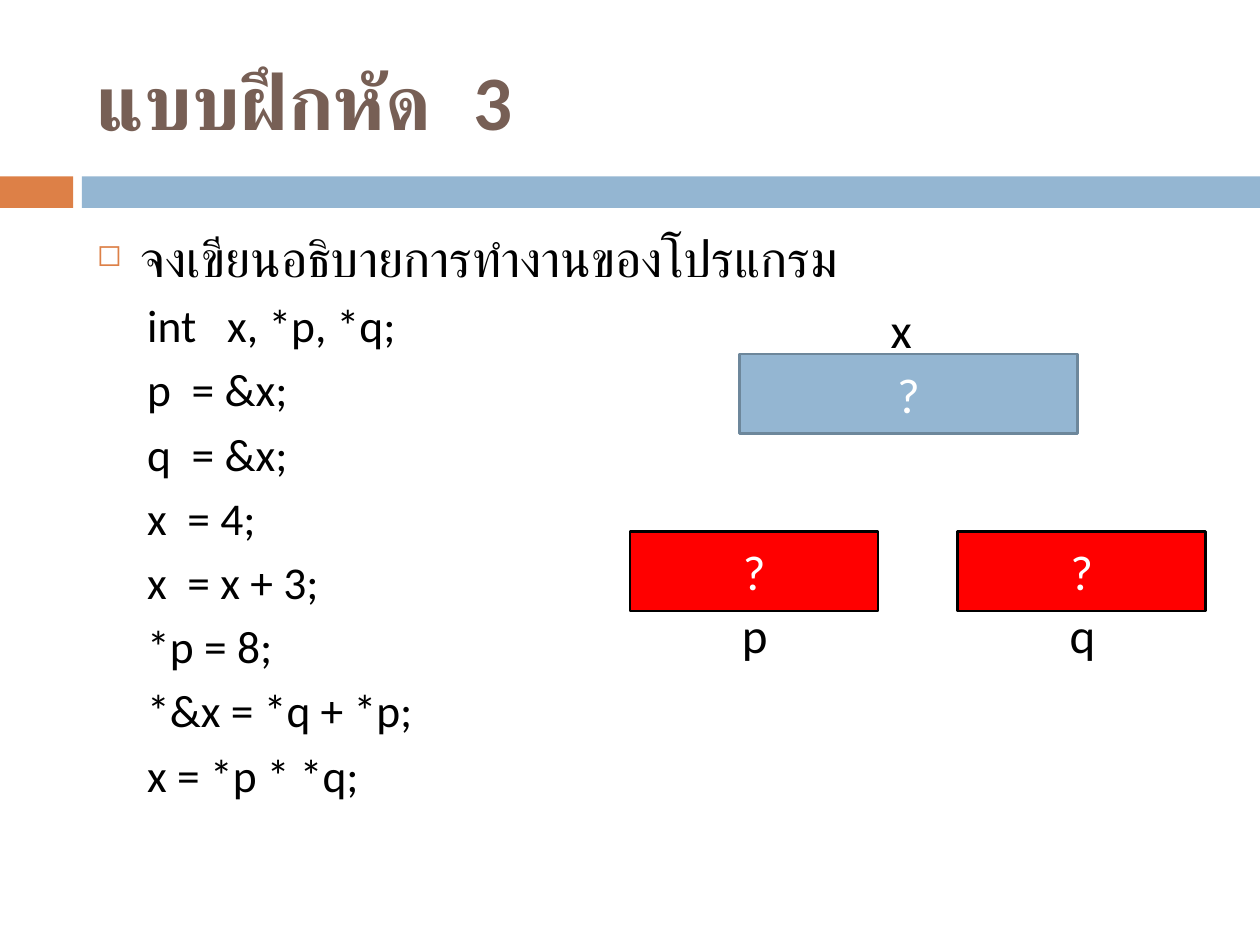
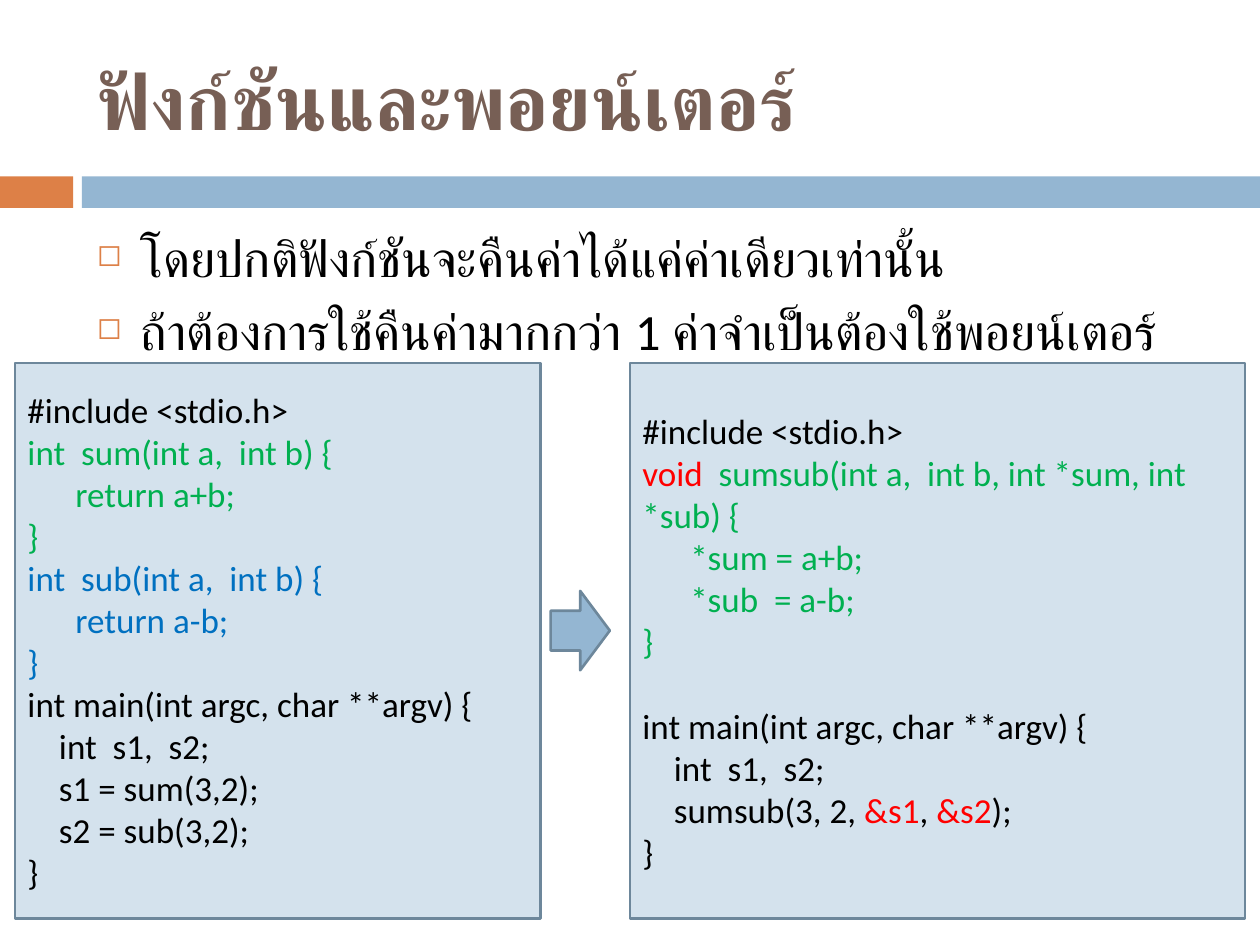
from dataclasses import dataclass

from lxml import etree
from pptx import Presentation
from pptx.dml.color import RGBColor
from pptx.enum.shapes import MSO_SHAPE
from pptx.enum.text import MSO_ANCHOR, MSO_AUTO_SIZE, PP_ALIGN
from pptx.oxml.ns import qn
from pptx.util import Inches, Pt

RECTANGLE = MSO_SHAPE.RECTANGLE
RIGHT_ARROW = MSO_SHAPE.RIGHT_ARROW
MIDDLE = MSO_ANCHOR.MIDDLE
FIT_TEXT = MSO_AUTO_SIZE.SHAPE_TO_FIT_TEXT
CENTER = PP_ALIGN.CENTER
LEFT = PP_ALIGN.LEFT


@dataclass(frozen=True)
class Theme:
    font: str = "Calibri"
    black: str = "000000"
    white: str = "FFFFFF"
    title: str = "775F55"
    orange: str = "DD8047"
    blue: str = "94B6D2"
    outline: str = "6D879B"
    panel: str = "D4E2ED"
    red: str = "FF0000"
    green: str = "00B050"
    code_blue: str = "0070C0"
    title_size: int = 44
    bullet_size: int = 29
    statement_size: int = 26
    memory_size: int = 28
    code_size: int = 20
    line_width: float = 1.5


THEME = Theme()


@dataclass(frozen=True)
class Area:
    left: float
    top: float
    width: float
    height: float

    def lengths(self):
        return [Inches(n) for n in (self.left, self.top, self.width, self.height)]


@dataclass(frozen=True)
class Span:
    text: str
    color: str = THEME.black


@dataclass(frozen=True)
class CodeLine:
    spans: tuple[Span, ...]
    indent: float = 0
    space_before: float = 0


@dataclass(frozen=True)
class MemoryCell:
    name: str
    area: Area
    label_left: float
    label_top: float
    fill: str
    line: str


@dataclass(frozen=True)
class CodePanel:
    area: Area
    lines: tuple[CodeLine, ...]


TITLE_AREA = Area(0.67, 0.25, 8.92, 1.08)
BODY_AREA = Area(0.67, 1.75, 8.92, 4.92)
BANDS = ((Area(0, 1.4, 0.58, 0.25), THEME.orange),
         (Area(0.65, 1.4, 9.35, 0.25), THEME.blue))

STATEMENTS = ("int   x, *p, *q;", "p  = &x;", "q  = &x;", "x  = 4;",
              "x  = x + 3;", "*p = 8;", "*&x = *q + *p;", "x = *p * *q;")


def pointer_cell(name: str, left: float) -> MemoryCell:
    return MemoryCell(name, Area(left, 4.22, 1.97, 0.63), left + 0.79, 4.75,
                      THEME.red, THEME.black)


MEMORY = (
    MemoryCell("x", Area(5.87, 2.81, 2.68, 0.63), 6.97, 2.33, THEME.blue, THEME.outline),
    pointer_cell("q", 7.6),
    pointer_cell("p", 5),
)


def code(text: str, color: str = THEME.black, indent: float = 0,
         space_before: float = 0) -> CodeLine:
    return CodeLine((Span(text, color),), indent, space_before)


FUNCTION_INDENT = 0.38
MAIN_INDENT = 0.25
INCLUDE = code("#include <stdio.h>")
MAIN = "int main(int argc, char **argv) {"
LOCALS = code("int  s1,  s2;", indent=MAIN_INDENT)
END = code("}")


def returning_function(name: str, operator: str, color: str) -> tuple[CodeLine, ...]:
    return (code(f"int  {name}(int a,  int b) {{", color),
            code(f"return a{operator}b;", color, FUNCTION_INDENT),
            code("}", color))


PANELS = (
    CodePanel(Area(0.12, 2.88, 4.17, 4.41), (
        INCLUDE,
        *returning_function("sum", "+", THEME.green),
        *returning_function("sub", "-", THEME.code_blue),
        code(MAIN),
        LOCALS,
        code("s1 = sum(3,2);", indent=MAIN_INDENT),
        code("s2 = sub(3,2);", indent=MAIN_INDENT),
        END)),
    CodePanel(Area(5, 2.88, 4.88, 4.41), (
        INCLUDE,
        CodeLine((Span("void  ", THEME.red),
                  Span("sumsub(int a,  int b, int *sum, int *sub) {", THEME.green))),
        code("*sum = a+b;", THEME.green, FUNCTION_INDENT),
        code("*sub  = a-b;", THEME.green, FUNCTION_INDENT),
        code("}", THEME.green),
        code(MAIN, space_before=24.4),
        LOCALS,
        CodeLine((Span("sumsub(3, 2, "), Span("&s1", THEME.red), Span(", "),
                  Span("&s2", THEME.red), Span(");")), MAIN_INDENT),
        END)),
)


def format_run(run, size: float, color: str, bold: bool = False) -> None:
    run.font.name = THEME.font
    run.font.size = Pt(size)
    run.font.bold = bold
    run.font.color.rgb = RGBColor.from_string(color)


def set_indent(para, left: float, first: float = 0) -> None:
    properties = para._p.get_or_add_pPr()
    properties.set("marL", str(Inches(left)))
    properties.set("indent", str(Inches(first)))


def add_bullet(para) -> None:
    properties = para._p.get_or_add_pPr()
    color = etree.SubElement(properties, qn("a:buClr"))
    etree.SubElement(color, qn("a:srgbClr"), val=THEME.orange)
    etree.SubElement(properties, qn("a:buSzPct"), val="60000")
    etree.SubElement(properties, qn("a:buChar"), char="◻")


def add_block(page, kind, area: Area, fill: str, line: str | None = None):
    """Add a filled preset shape, outlined when a line colour is given."""
    shape = page.shapes.add_shape(kind, *area.lengths())
    shape.shadow.inherit = False
    shape.fill.solid()
    shape.fill.fore_color.rgb = RGBColor.from_string(fill)
    if line:
        shape.line.color.rgb = RGBColor.from_string(line)
        shape.line.width = Pt(THEME.line_width)
    else:
        shape.line.fill.background()
    return shape


def add_text_box(page, area: Area):
    box = page.shapes.add_textbox(*area.lengths())
    box.text_frame.word_wrap = True
    return box


def set_text(box, text: str, size: float, color: str, bold: bool = False):
    """Fill a box with one formatted paragraph and return the paragraph."""
    box.text_frame.text = text
    para = box.text_frame.paragraphs[0]
    format_run(para.runs[0], size, color, bold)
    return para


def add_page(deck, title: str):
    page = deck.slides.add_slide(deck.slide_layouts[6])
    for area, fill in BANDS:
        add_block(page, RECTANGLE, area, fill)
    box = add_text_box(page, TITLE_AREA)
    box.text_frame.vertical_anchor = MIDDLE
    set_text(box, title, THEME.title_size, THEME.title, bold=True)
    return page


def add_body(page, bullets: tuple[str, ...], statements: tuple[str, ...] = ()) -> None:
    frame = add_text_box(page, BODY_AREA).text_frame
    frame.text = "\n".join(bullets + statements)
    for number, para in enumerate(frame.paragraphs):
        is_bullet = number < len(bullets)
        para.space_before = Pt(7 if is_bullet else 5.5)
        if is_bullet:
            set_indent(para, 0.35, -0.35)
            add_bullet(para)
        else:
            set_indent(para, 0.7, -0.3)
        size = THEME.bullet_size if is_bullet else THEME.statement_size
        format_run(para.runs[0], size, THEME.black)


def add_memory_cell(page, cell: MemoryCell) -> None:
    block = add_block(page, RECTANGLE, cell.area, cell.fill, cell.line)
    block.text_frame.vertical_anchor = MIDDLE
    set_text(block, "?", THEME.memory_size, THEME.white).alignment = CENTER
    label = add_text_box(page, Area(cell.label_left, cell.label_top, 0.55, 0.57))
    label.text_frame.auto_size = FIT_TEXT
    set_text(label, cell.name, THEME.memory_size, THEME.black)


def add_code_panel(page, panel: CodePanel) -> None:
    frame = add_block(page, RECTANGLE, panel.area, THEME.panel, THEME.outline).text_frame
    frame.word_wrap = True
    frame.vertical_anchor = MIDDLE
    for number, line in enumerate(panel.lines):
        para = frame.add_paragraph() if number else frame.paragraphs[0]
        para.alignment = LEFT
        para.space_before = Pt(line.space_before)
        set_indent(para, line.indent)
        for span in line.spans:
            run = para.add_run()
            run.text = span.text
            format_run(run, THEME.code_size, span.color)


def build_exercise(deck) -> None:
    page = add_page(deck, "แบบฝึกหัด  3")
    add_body(page, ("จงเขียนอธิบายการทำงานของโปรแกรม",), STATEMENTS)
    for cell in MEMORY:
        add_memory_cell(page, cell)


def build_functions(deck) -> None:
    page = add_page(deck, "ฟังก์ชันและพอยน์เตอร์")
    add_body(page, ("โดยปกติฟังก์ชันจะคืนค่าได้แค่ค่าเดียวเท่านั้น",
                    "ถ้าต้องการใช้คืนค่ามากกว่า 1 ค่าจำเป็นต้องใช้พอยน์เตอร์"))
    for panel in PANELS:
        add_code_panel(page, panel)
    add_block(page, RIGHT_ARROW, Area(4.37, 4.69, 0.47, 0.63), THEME.blue, THEME.outline)


def main() -> None:
    deck = Presentation()
    deck.slide_width = Inches(10)
    deck.slide_height = Inches(7.5)
    build_exercise(deck)
    build_functions(deck)
    deck.save("out.pptx")


if __name__ == "__main__":
    main()
